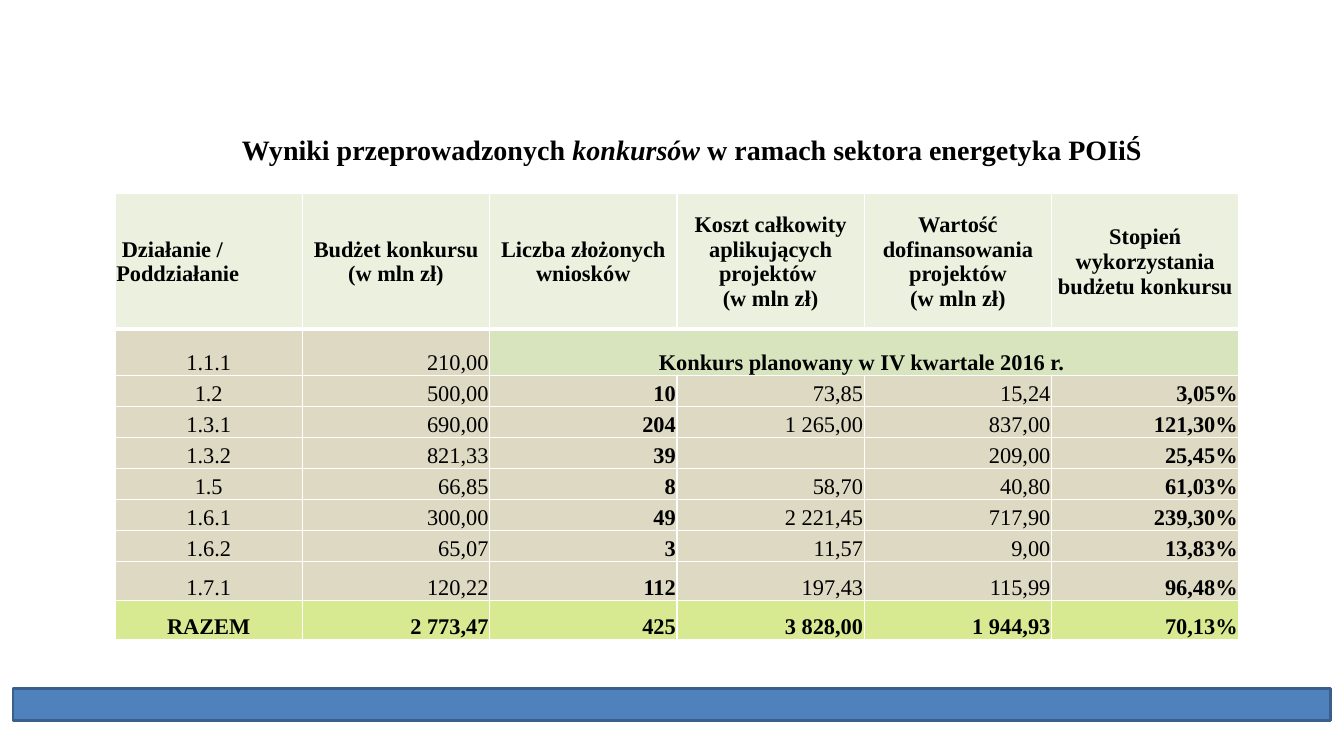
from dataclasses import dataclass

from lxml.etree import SubElement
from pptx import Presentation
from pptx.dml.color import RGBColor
from pptx.enum.shapes import MSO_SHAPE
from pptx.enum.text import MSO_ANCHOR, PP_ALIGN
from pptx.oxml.ns import qn
from pptx.util import Cm, Pt

HUES = {
    "ink": "000000",
    "white": "FFFFFF",
    "bar": "4F81BD",
    "edge": "3A5F8C",
    "head": "EBF1DE",
    "body": "DDD9C3",
    "plan": "D7E4BD",
    "total": "D7EA92",
}
FONT = "Times New Roman"
COLS = 6
WIDTH = 4.72


@dataclass
class Row:
    cells: list[str]
    high: float = 0.78
    fill: str = "body"


ROWS = [
    Row([" Działanie / Poddziałanie", "Budżet konkursu (w mln zł)",
         "Liczba złożonych wniosków",
         "Koszt całkowity aplikujących projektów \v(w mln zł)",
         "Wartość dofinansowania projektów\n(w mln zł)",
         "Stopień wykorzystania budżetu konkursu"], 3.41, "head"),
    Row(["1.1.1", "210,00", "Konkurs planowany w IV kwartale 2016 r. "], 1.17),
    Row(["1.2", "500,00", "10", "73,85", "15,24", "3,05%"]),
    Row(["1.3.1", "690,00", "204", "1 265,00", "837,00", "121,30%"]),
    Row(["1.3.2", "821,33", "39", "", "209,00", "25,45%"]),
    Row(["1.5", "66,85", "8", "58,70", "40,80", "61,03%"]),
    Row(["1.6.1", "300,00", "49", "2 221,45", "717,90", "239,30%"]),
    Row(["1.6.2", "65,07", "3", "11,57", "9,00", "13,83%"]),
    Row(["1.7.1", "120,22", "112", "197,43", "115,99", "96,48%"], 0.99),
    Row(["RAZEM", "2 773,47", "425", "3 828,00", "1 944,93", "70,13%"], 0.99, "total"),
]


def tint(name: str) -> RGBColor:
    return RGBColor.from_string(HUES[name])


def write(frame, text: str, *, size: int = 16, bold: bool = True,
          align=PP_ALIGN.CENTER) -> None:
    for spot, line in enumerate(text.split("\n")):
        para = frame.add_paragraph() if spot else frame.paragraphs[0]
        para.alignment = align
        for turn, part in enumerate(line.split("*")):
            for step, piece in enumerate(part.split("\v")):
                if step:
                    para.add_line_break()
                if piece:
                    run = para.add_run()
                    run.text = piece
                    run.font.name = FONT
                    run.font.size = Pt(size)
                    run.font.bold = bold
                    run.font.italic = turn % 2 == 1
                    run.font.color.rgb = tint("ink")
        for gap in para._p.findall(qn("a:br")):
            SubElement(gap, qn("a:rPr"), sz=str(size * 100))
        SubElement(para._p, qn("a:endParaRPr"), sz=str(size * 100))


def frame_cell(cell, top: int, base: int) -> None:
    props = cell._tc.get_or_add_tcPr()
    sides = {"lnL": 1, "lnR": 1, "lnT": top, "lnB": base}
    for spot, (side, wide) in enumerate(sides.items()):
        line = SubElement(props, qn(f"a:{side}"), w=str(Pt(wide)))
        fill = SubElement(line, qn("a:solidFill"))
        SubElement(fill, qn("a:srgbClr"), val=HUES["white"])
        props.insert(spot, line)


def fill_cell(cell, row: Row, col: int, text: str, plan: bool) -> None:
    head = row.fill == "head"
    cell.margin_left = cell.margin_right = cell.margin_top = Cm(0.03)
    cell.margin_bottom = 0
    cell.vertical_anchor = MSO_ANCHOR.MIDDLE if head else MSO_ANCHOR.BOTTOM
    cell.fill.solid()
    cell.fill.fore_color.rgb = tint("plan" if plan else row.fill)
    if head:
        align = PP_ALIGN.CENTER if col else PP_ALIGN.LEFT
    else:
        align = PP_ALIGN.CENTER if plan or col == 0 else PP_ALIGN.RIGHT
    bold = row.fill != "body" or col in (2, 5)
    write(cell.text_frame, text, bold=bold, align=align)


def draw_table(slide) -> None:
    total = sum(row.high for row in ROWS)
    table = slide.shapes.add_table(len(ROWS), COLS, Cm(2.9), Cm(4.88),
                                   Cm(WIDTH * COLS), Cm(total)).table
    table.first_row = table.horz_banding = False
    for col in table.columns:
        col.width = Cm(WIDTH)
    for spot, row in enumerate(ROWS):
        table.rows[spot].height = Cm(row.high)
        short = len(row.cells)
        if short < COLS:
            table.cell(spot, short - 1).merge(table.cell(spot, COLS - 1))
        texts = row.cells + [""] * (COLS - short)
        for col, text in enumerate(texts):
            cell = table.cell(spot, col)
            fill_cell(cell, row, col, text, short < COLS and col >= short - 1)
            frame_cell(cell, 3 if spot == 1 else 1, 3 if spot == 0 else 1)


def draw_bar(slide) -> None:
    bar = slide.shapes.add_shape(MSO_SHAPE.FLOWCHART_PROCESS,
                                 Cm(0.33), Cm(17.35), Cm(33.2), Cm(0.8))
    bar.shadow.inherit = False
    bar.fill.solid()
    bar.fill.fore_color.rgb = tint("bar")
    bar.line.color.rgb = tint("edge")
    bar.line.width = Pt(2)


def draw_title(slide) -> None:
    box = slide.shapes.add_textbox(Cm(2.9), Cm(2.44), Cm(29.08), Cm(1.88))
    box.text_frame.word_wrap = True
    box.text_frame.vertical_anchor = MSO_ANCHOR.BOTTOM
    write(box.text_frame,
          "Wyniki przeprowadzonych *konkursów* w ramach sektora energetyka POIiŚ",
          size=20)


def main() -> None:
    deck = Presentation()
    deck.slide_width = Cm(33.87)
    deck.slide_height = Cm(19.05)
    slide = deck.slides.add_slide(deck.slide_layouts[6])
    draw_bar(slide)
    draw_table(slide)
    draw_title(slide)
    deck.save("out.pptx")


if __name__ == "__main__":
    main()
